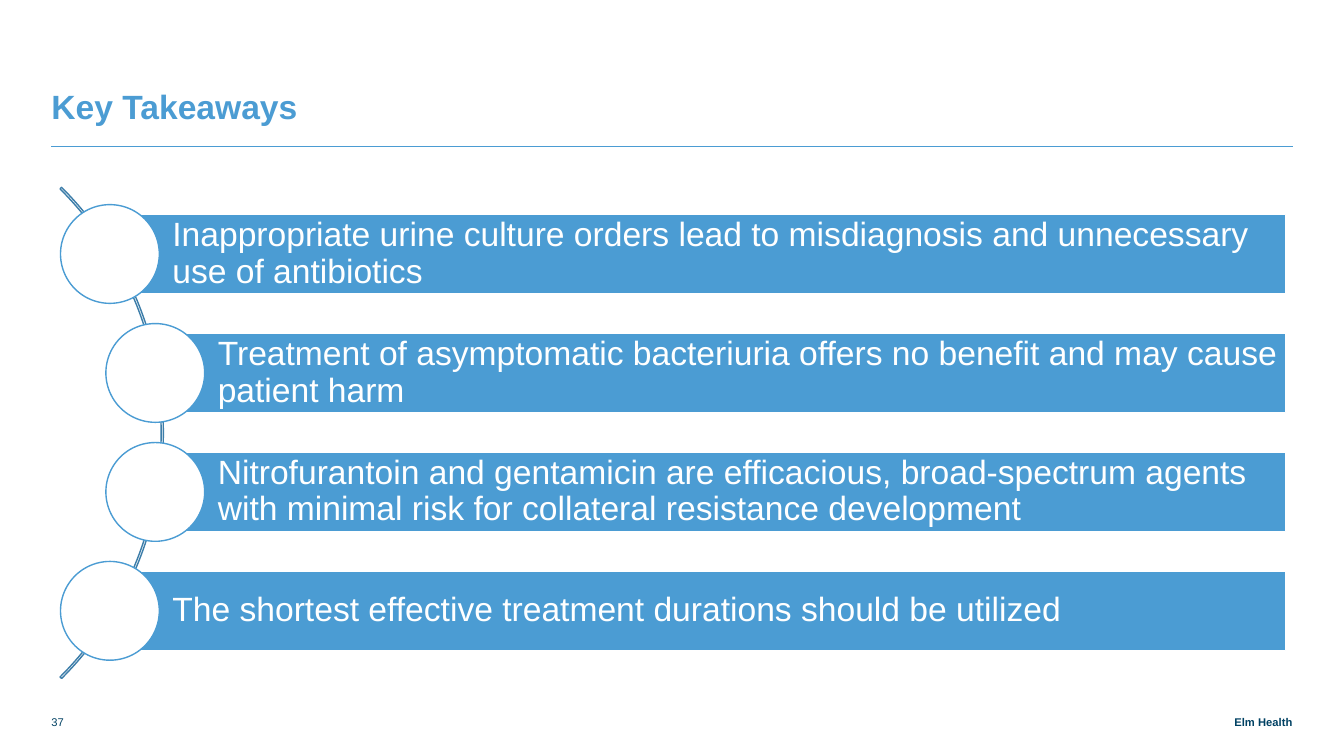
"""Build the Key Takeaways slide: four bars with circles along an arc."""
from lxml.etree import SubElement
from pptx import Presentation
from pptx.dml.color import RGBColor
from pptx.enum.shapes import MSO_CONNECTOR as LINK, MSO_SHAPE as KIND
from pptx.enum.text import MSO_ANCHOR as ANCHOR, PP_ALIGN as ALIGN
from pptx.oxml.ns import qn
from pptx.util import Inches, Pt

BLUE, STEEL, NAVY, WHITE = "4B9CD3", "3C7DA9", "004163", "FFFFFF"
LEFT, RIGHT = 0.51, 12.82
BAR_RIGHT, BAR_HEIGHT, CIRCLE = 12.75, 0.79, 0.98
FIRST_ROW, ROW_STEP = 2.52, 1.18
ARC_SIZE = 6.89


def write(shape, text, size, color, bold=False, align=ALIGN.LEFT,
          anchor=ANCHOR.BOTTOM, insets=(0, 0, 0, 0), spacing=None):
    frame = shape.text_frame
    frame.word_wrap = True
    frame.vertical_anchor = anchor
    (frame.margin_left, frame.margin_top,
     frame.margin_right, frame.margin_bottom) = map(Inches, insets)
    para = frame.paragraphs[0]
    para.alignment = align
    para.line_spacing = spacing
    span = para.add_run()
    span.text = text
    span.font.name, span.font.size, span.font.bold = "Arial", Pt(size), bold
    span.font.color.rgb = RGBColor.from_string(color)


def draw(kind, left, top, width, height, line, fill=None):
    shape = page.shapes.add_shape(kind, *map(Inches, (left, top, width, height)))
    shape.shadow.inherit = False
    if fill:
        shape.fill.solid()
        shape.fill.fore_color.rgb = RGBColor.from_string(fill)
    else:
        shape.fill.background()
    shape.line.color.rgb = RGBColor.from_string(line)
    shape.line.width = Pt(1)
    return shape


deck = Presentation()
deck.slide_width, deck.slide_height = Inches(13.33), Inches(7.5)
page = deck.slides.add_slide(deck.slide_layouts[6])

labels = [
    ("Key Takeaways", LEFT, 0.46, RIGHT - LEFT, 0.79, 24, BLUE, True, ALIGN.LEFT, Pt(28)),
    ("37", LEFT, 7, 0.46, 0.23, 8, NAVY, False, ALIGN.LEFT, None),
    ("Elm Health", RIGHT - 1.64, 7, 1.64, 0.23, 8, NAVY, True, ALIGN.RIGHT, None),
]
for text, left, top, width, height, size, color, bold, align, spacing in labels:
    box = page.shapes.add_textbox(*map(Inches, (left, top, width, height)))
    write(box, text, size, color, bold, align, spacing=spacing)

rule = page.shapes.add_connector(
    LINK.STRAIGHT, *map(Inches, (LEFT, 1.45, RIGHT, 1.45)))
rule.line.color.rgb = RGBColor.from_string(BLUE)
rule.line.width = Pt(0.5)
SubElement(rule.line._get_or_add_ln().getparent(), qn("a:effectLst"))

arc = draw(KIND.BLOCK_ARC, -5.27, 0.85, ARC_SIZE, ARC_SIZE, STEEL)
for index, value in enumerate((189, 27, 0.00313)):
    arc.adjustments[index] = value

takeaways = [
    (1.09, "Inappropriate urine culture orders lead to misdiagnosis and unnecessary use of antibiotics"),
    (1.54, "Treatment of asymptomatic bacteriuria offers no benefit and may cause patient harm"),
    (1.54, "Nitrofurantoin and gentamicin are efficacious, broad-spectrum agents with minimal risk for collateral resistance development"),
    (1.09, "The shortest effective treatment durations should be utilized"),
]
for row, (left, text) in enumerate(takeaways):
    middle = FIRST_ROW + row * ROW_STEP
    bar = draw(KIND.RECTANGLE, left, middle - BAR_HEIGHT / 2,
               BAR_RIGHT - left, BAR_HEIGHT, WHITE, BLUE)
    write(bar, text, 24, WHITE, anchor=ANCHOR.MIDDLE,
          insets=(0.62, 0.07, 0.07, 0.07), spacing=0.9)
    draw(KIND.OVAL, left - CIRCLE / 2, middle - CIRCLE / 2,
         CIRCLE, CIRCLE, BLUE, WHITE)

deck.save("out.pptx")
